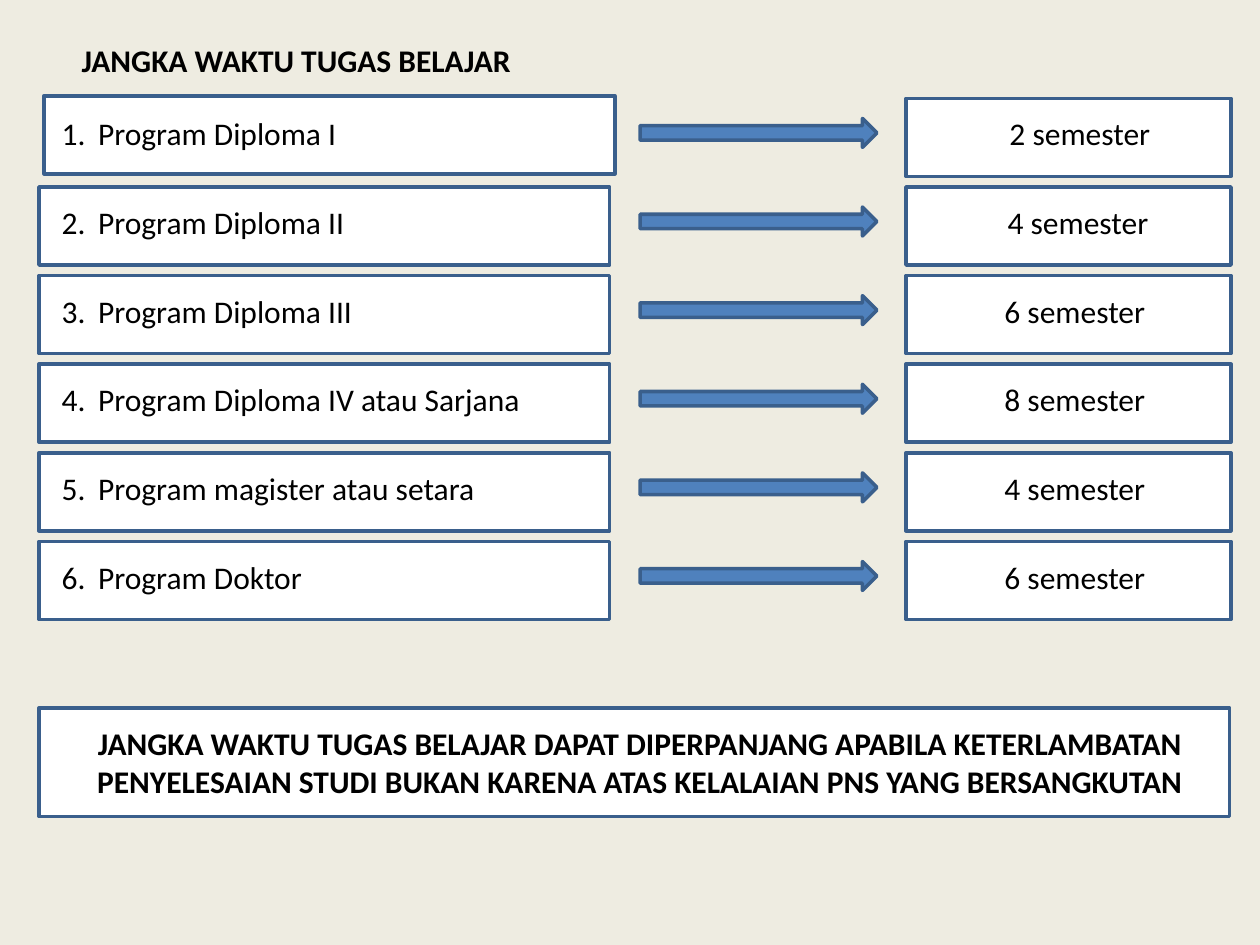
from pptx import Presentation
from pptx.dml.color import RGBColor
from pptx.enum import shapes, text
from pptx.util import Inches, Pt

COLORS = {"back": "EEECE1", "box": "FFFFFF", "edge": "3A5F8C",
          "arrow": "4F81BD", "ink": "000000"}
ROWS = [
    ("Program Diploma I", "2 semester", 0.18),
    ("Program Diploma II", "4 semester", 0.15),
    ("Program Diploma III", "6 semester", 0.1),
    ("Program Diploma IV atau Sarjana", "8 semester", 0.1),
    ("Program magister atau setara", "4 semester", 0.1),
    ("Program Doktor", "6 semester", 0.1),
]
NOTE = ("JANGKA WAKTU TUGAS BELAJAR DAPAT DIPERPANJANG APABILA KETERLAMBATAN "
        "PENYELESAIAN STUDI BUKAN KARENA ATAS KELALAIAN PNS YANG BERSANGKUTAN")
PITCH = 0.7033
RECT = shapes.MSO_SHAPE.RECTANGLE
ARROW = shapes.MSO_SHAPE.RIGHT_ARROW


def color(name):
    return RGBColor.from_string(COLORS[name])


def add_form(slide, kind, fill, *box):
    form = slide.shapes.add_shape(kind, *map(Inches, box))
    form.shadow.inherit = False
    form.fill.solid()
    form.fill.fore_color.rgb = color(fill)
    form.line.color.rgb = color("edge")
    form.line.width = Pt(2)


def add_label(slide, words, *box, bold=False, center=False, left=0, hang=0):
    frame = slide.shapes.add_textbox(*map(Inches, box)).text_frame
    frame.word_wrap = True
    frame.auto_size = text.MSO_AUTO_SIZE.SHAPE_TO_FIT_TEXT
    frame.text = words
    para = frame.paragraphs[0]
    if center:
        para.alignment = text.PP_ALIGN.CENTER
    if left:
        props = para._p.get_or_add_pPr()
        props.set("marL", str(Inches(left)))
        props.set("indent", str(-Inches(hang)))
    font = para.runs[0].font
    font.name = "Calibri"
    font.size = Pt(18)
    font.bold = bold
    font.color.rgb = color("ink")


def add_row(slide, index, x, y, width):
    name, term, shift = ROWS[index]
    nudge = 0.04 if index == 0 else 0
    right = x + width - 2.58
    add_form(slide, RECT, "box", x + nudge, y - nudge / 2, 4.53, 0.62)
    add_label(slide, f"{index + 1}.\t{name}", x + 0.08, y + 0.08, 4.38, 0.4,
              left=0.29, hang=0.29)
    add_form(slide, ARROW, "arrow", x + 4.77, y + 0.16, 1.88, 0.23)
    add_form(slide, RECT, "box", right, y, 2.58, 0.62)
    add_label(slide, term, right + 0.08, y + 0.08, 2.42, 0.4,
              center=True, left=shift)


def add_note(slide, x, y, width, height):
    add_form(slide, RECT, "box", x, y, width, height)
    add_label(slide, NOTE, x + 0.16, y + 0.08, width - 0.23, height - 0.15,
              bold=True, center=True)


def main():
    deck = Presentation()
    deck.slide_width, deck.slide_height = Inches(10), Inches(7.5)
    slide = deck.slides.add_slide(deck.slide_layouts[6])
    slide.background.fill.solid()
    slide.background.fill.fore_color.rgb = color("back")
    add_label(slide, "JANGKA WAKTU TUGAS BELAJAR", 0.55, 0.28, 9.45, 0.4,
              bold=True)
    for index in range(len(ROWS)):
        add_row(slide, index, 0.31, 0.78 + index * PITCH, 9.46)
    add_note(slide, 0.31, 5.62, 9.45, 0.86)
    deck.save("out.pptx")


if __name__ == "__main__":
    main()
